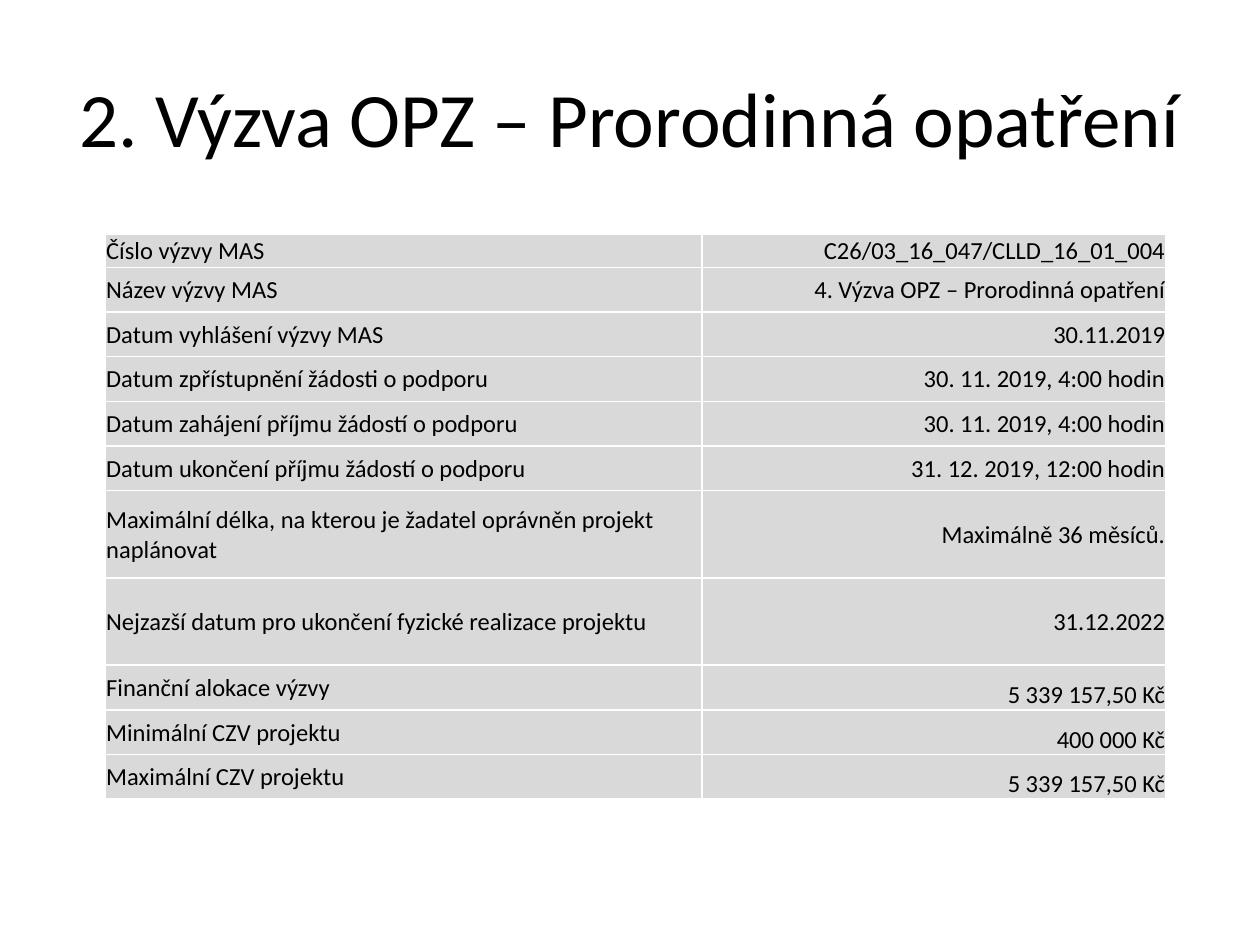
from lxml import etree
from pptx import Presentation
from pptx.dml.color import RGBColor
from pptx.enum import text
from pptx.oxml import ns
from pptx.util import Cm, Pt

TITLE = "2. Výzva OPZ – Prorodinná opatření"

MIDDLE, BOTTOM = text.MSO_ANCHOR.MIDDLE, text.MSO_ANCHOR.BOTTOM
FIRST, SINGLE, DOUBLE = 0.66, 0.9, 1.76  # row heights in cm

# label, value, row height, anchor of the value
CALL_DETAILS = [
    ("Číslo výzvy MAS", "C26/03_16_047/CLLD_16_01_004", FIRST, MIDDLE),
    ("Název výzvy MAS", "4. Výzva OPZ – Prorodinná opatření", SINGLE, MIDDLE),
    ("Datum vyhlášení výzvy MAS", "30.11.2019", SINGLE, MIDDLE),
    ("Datum zpřístupnění žádosti o podporu", "30. 11. 2019, 4:00 hodin", SINGLE, MIDDLE),
    ("Datum zahájení příjmu žádostí o podporu", "30. 11. 2019, 4:00 hodin", SINGLE, MIDDLE),
    ("Datum ukončení příjmu žádostí o podporu", "31. 12. 2019, 12:00 hodin", SINGLE, MIDDLE),
    ("Maximální délka, na kterou je žadatel oprávněn projekt naplánovat",
     "Maximálně 36 měsíců.", DOUBLE, MIDDLE),
    ("Nejzazší datum pro ukončení fyzické realizace projektu", "31.12.2022", DOUBLE, MIDDLE),
    ("Finanční alokace výzvy", "5 339 157,50 Kč", SINGLE, BOTTOM),
    ("Minimální CZV projektu", "400 000 Kč", SINGLE, BOTTOM),
    ("Maximální CZV projektu", "5 339 157,50 Kč", SINGLE, BOTTOM),
]
COLUMN_WIDTHS = (12.03, 9.36)

THEME = {
    "font": "Calibri",
    "title_size": 44,
    "cell_size": 14,
    "ink": "000000",
    "cell_fill": "D9D9D9",
    "border": "FFFFFF",
    "border_width": 1,
}


def write(frame, words, size, align):
    para = frame.paragraphs[0]
    para.alignment = align
    span = para.add_run()
    span.text = words
    span.font.name = THEME["font"]
    span.font.size = Pt(size)
    span.font.color.rgb = RGBColor.from_string(THEME["ink"])


def add_borders(cell):
    properties = cell._tc.get_or_add_tcPr()
    for index, side in enumerate(("lnL", "lnR", "lnT", "lnB")):
        line = etree.Element(ns.qn(f"a:{side}"), w=str(Pt(THEME["border_width"])))
        fill = etree.SubElement(line, ns.qn("a:solidFill"))
        etree.SubElement(fill, ns.qn("a:srgbClr"), val=THEME["border"])
        properties.insert(index, line)  # borders come before the fill


def fill_cell(cell, words, align, anchor):
    cell.margin_left = cell.margin_right = cell.margin_top = Cm(0.02)
    cell.margin_bottom = 0
    cell.vertical_anchor = anchor
    cell.fill.solid()
    cell.fill.fore_color.rgb = RGBColor.from_string(THEME["cell_fill"])
    write(cell.text_frame, words, THEME["cell_size"], align)
    add_borders(cell)


def add_title(page):
    title = page.shapes.title
    title.left, title.top, title.width, title.height = Cm(1.27), Cm(0.76), Cm(22.86), Cm(3.18)
    title.text_frame.vertical_anchor = MIDDLE
    write(title.text_frame, TITLE, THEME["title_size"], text.PP_ALIGN.CENTER)


def add_details_table(page):
    height = sum(row[2] for row in CALL_DETAILS)
    table = page.shapes.add_table(
        len(CALL_DETAILS), len(COLUMN_WIDTHS),
        Cm(2.12), Cm(4.73), Cm(sum(COLUMN_WIDTHS)), Cm(height)).table
    table.first_row = table.horz_banding = False
    for column, width in zip(table.columns, COLUMN_WIDTHS):
        column.width = Cm(width)
    for row, (label, value, row_height, anchor) in zip(table.rows, CALL_DETAILS):
        row.height = Cm(row_height)
        label_cell, value_cell = row.cells
        fill_cell(label_cell, label, text.PP_ALIGN.LEFT, MIDDLE)
        fill_cell(value_cell, value, text.PP_ALIGN.RIGHT, anchor)


def main():
    deck = Presentation()
    deck.slide_width, deck.slide_height = Cm(25.4), Cm(19.05)
    page = deck.slides.add_slide(deck.slide_layouts.get_by_name("Title Only"))
    add_title(page)
    add_details_table(page)
    deck.save("out.pptx")


if __name__ == "__main__":
    main()
